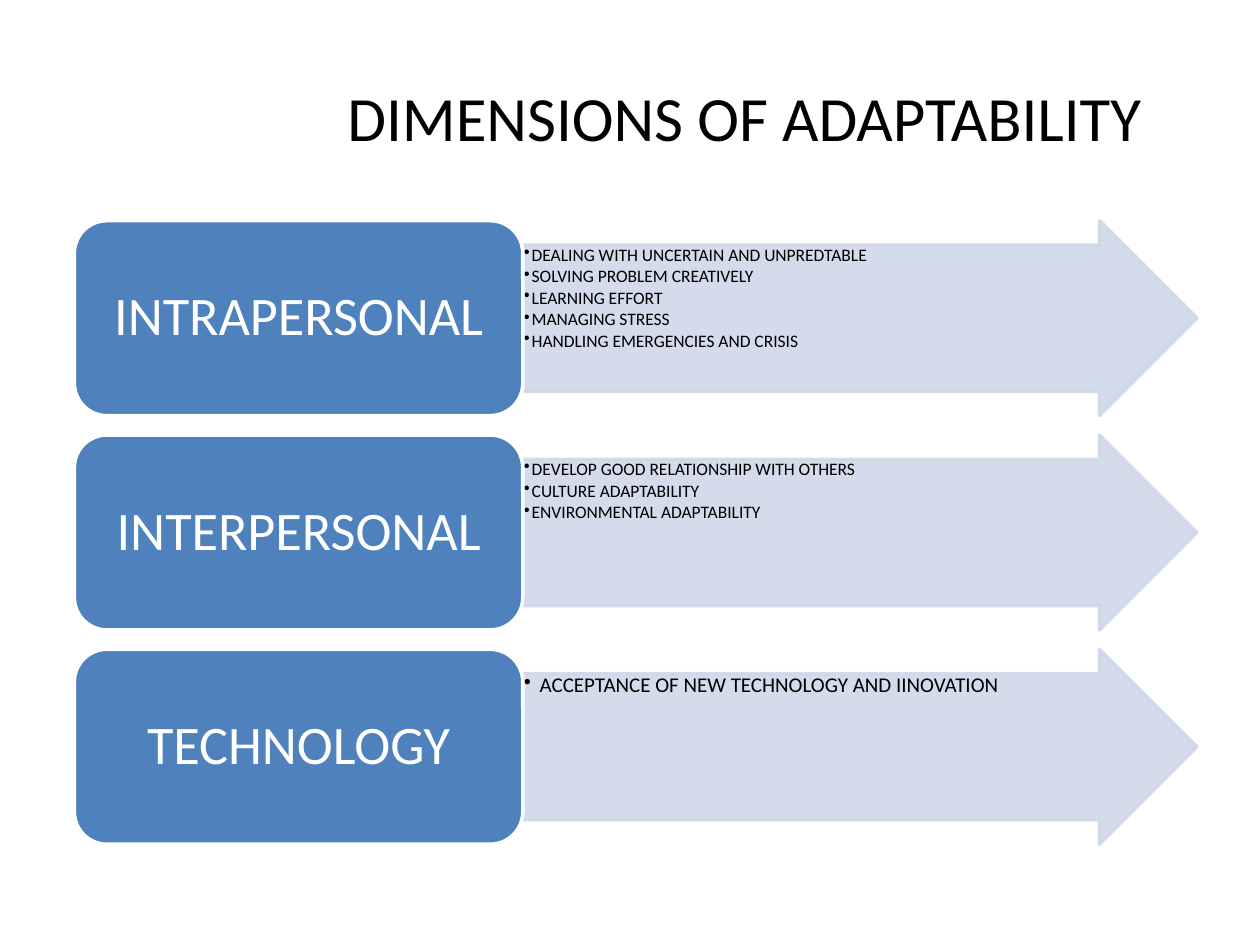
from lxml import etree
from pptx import Presentation
from pptx.dml.color import RGBColor
from pptx.enum.shapes import MSO_SHAPE
from pptx.enum.text import MSO_ANCHOR, PP_ALIGN
from pptx.oxml.ns import qn
from pptx.util import Cm, Pt

ROUNDED = MSO_SHAPE.ROUNDED_RECTANGLE
ARROW = MSO_SHAPE.RIGHT_ARROW
TOP, MIDDLE = MSO_ANCHOR.TOP, MSO_ANCHOR.MIDDLE
LEFT, CENTER = PP_ALIGN.LEFT, PP_ALIGN.CENTER

TITLE = "DIMENSIONS OF ADAPTABILITY"
DIMENSIONS = [
    {"name": "INTRAPERSONAL", "size": 10, "indent": 0.16, "points": [
        "DEALING WITH UNCERTAIN AND UNPREDTABLE",
        "SOLVING PROBLEM CREATIVELY",
        "LEARNING EFFORT",
        "MANAGING STRESS",
        "HANDLING EMERGENCIES AND CRISIS",
    ]},
    {"name": "INTERPERSONAL", "size": 10, "indent": 0.16, "points": [
        "DEVELOP GOOD RELATIONSHIP WITH OTHERS",
        "CULTURE ADAPTABILITY",
        "ENVIRONMENTAL ADAPTABILITY",
    ]},
    {"name": "TECHNOLOGY", "size": 12, "indent": 0.32, "points": [
        "ACCEPTANCE OF NEW TECHNOLOGY AND IINOVATION",
    ]},
]

THEME = {
    "font": "Calibri",
    "title_size": 36,
    "name_size": 31,
    "text": RGBColor(0x00, 0x00, 0x00),
    "light": RGBColor(0xFF, 0xFF, 0xFF),
    "box": RGBColor(0x4F, 0x81, 0xBD),
    "arrow": RGBColor(0xD0, 0xD8, 0xE8),
    "arrow_opacity": 90,
}

BOX_LEFT, BOX_WIDTH, ARROW_WIDTH = 1.5, 9.04, 13.59
ROW_TOP, ROW_HEIGHT, ROW_GAP = 4.45, 3.93, 0.39


def style_font(paragraph, size, color):
    paragraph.font.name = THEME["font"]
    paragraph.font.size = Pt(size)
    paragraph.font.color.rgb = color


def add_block(slide, kind, left, top, width, fill, line):
    shape = slide.shapes.add_shape(kind, Cm(left), Cm(top), Cm(width), Cm(ROW_HEIGHT))
    shape.shadow.inherit = False
    shape.fill.solid()
    shape.fill.fore_color.rgb = fill
    shape.line.color.rgb = line
    shape.line.width = Pt(2)
    return shape


def set_opacity(shape, percent):
    for color in shape._element.spPr.iter(qn("a:srgbClr")):
        etree.SubElement(color, qn("a:alpha"), val=str(percent * 1000))


def set_frame(shape, anchor, horizontal, vertical):
    frame = shape.text_frame
    frame.word_wrap = True
    frame.vertical_anchor = anchor
    frame.margin_left = frame.margin_right = Cm(horizontal)
    frame.margin_top = frame.margin_bottom = Cm(vertical)
    return frame


def add_bullet(paragraph, indent):
    properties = paragraph._p.get_or_add_pPr()
    properties.set("marL", str(Cm(indent)))
    properties.set("indent", str(-Cm(indent)))
    etree.SubElement(properties, qn("a:buChar"), char="•")


def write(frame, lines, size, color, alignment, space_after, indent=None):
    frame.text = "\n".join(lines)
    for paragraph in frame.paragraphs:
        paragraph.alignment = alignment
        paragraph.line_spacing = 0.9
        paragraph.space_after = Pt(size * space_after)
        if indent:
            paragraph.level = 1
            add_bullet(paragraph, indent)
        style_font(paragraph, size, color)


def add_title(slide):
    title = slide.shapes.title
    title.left, title.top, title.width, title.height = Cm(5.89), Cm(0.76), Cm(18.24), Cm(3.18)
    title.text_frame.text = TITLE
    title.text_frame.vertical_anchor = MIDDLE
    paragraph = title.text_frame.paragraphs[0]
    paragraph.alignment = CENTER
    style_font(paragraph, THEME["title_size"], THEME["text"])


def add_dimension(slide, dimension, top):
    arrow = add_block(slide, ARROW, BOX_LEFT + BOX_WIDTH, top, ARROW_WIDTH,
                      THEME["arrow"], THEME["arrow"])
    arrow.adjustments[0] = 0.75
    arrow.adjustments[1] = 0.5
    set_opacity(arrow, THEME["arrow_opacity"])
    write(set_frame(arrow, TOP, 0.02, 0.02), dimension["points"], dimension["size"],
          THEME["text"], LEFT, 0.15, dimension["indent"])

    box = add_block(slide, ROUNDED, BOX_LEFT, top, BOX_WIDTH, THEME["box"], THEME["light"])
    write(set_frame(box, MIDDLE, 0.33, 0.16), [dimension["name"]], THEME["name_size"],
          THEME["light"], CENTER, 0.35)


def main():
    presentation = Presentation()
    presentation.slide_width, presentation.slide_height = Cm(25.4), Cm(19.05)
    slide = presentation.slides.add_slide(presentation.slide_layouts[5])
    add_title(slide)
    for row, dimension in enumerate(DIMENSIONS):
        add_dimension(slide, dimension, ROW_TOP + row * (ROW_HEIGHT + ROW_GAP))
    presentation.save("out.pptx")


if __name__ == "__main__":
    main()
